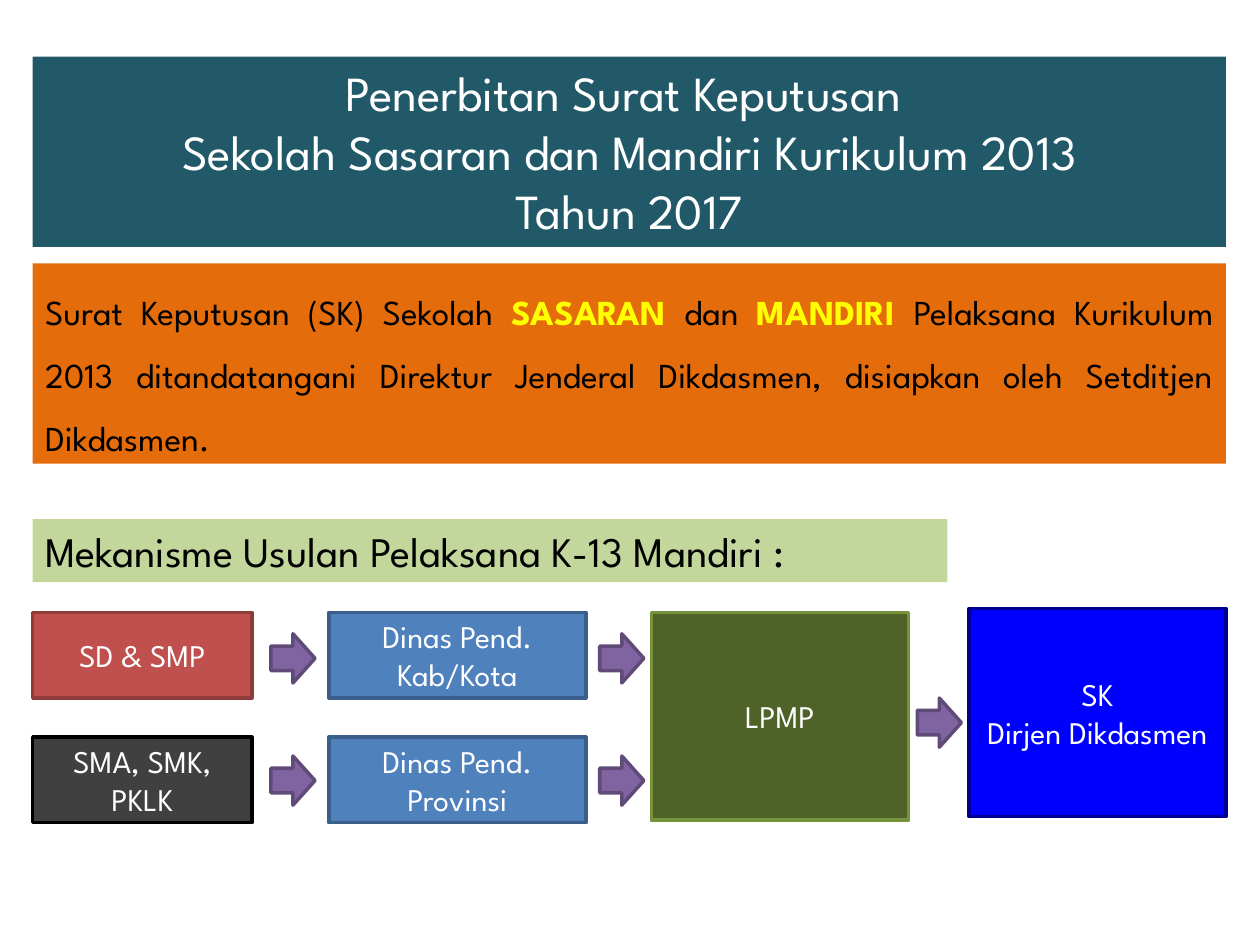
from pptx import Presentation
from pptx.dml.color import RGBColor
from pptx.enum.shapes import MSO_SHAPE
from pptx.enum.text import MSO_ANCHOR, MSO_AUTO_SIZE, PP_ALIGN
from pptx.util import Pt

THEME = {
    "font": "League Spartan",
    "title_size": 28, "heading_size": 24, "body_size": 20, "box_size": 18,
    "line_width": 2,
    "white": "FFFFFF", "black": "000000", "highlight": "FFFF00",
    "title": "215968", "decree": "E46C0A", "heading": "C3D69B",
    "primary": ("C0504D", "8E3B39"),
    "secondary": ("404040", "000000"),
    "office": ("4F81BD", "3A5F8C"),
    "agency": ("4F6228", "77933C"),
    "approval": ("0000FF", "000090"),
    "arrow": ("8064A2", "5F4A78"),
}

LEFT, FULL_WIDTH, HEADING_WIDTH = 18.72, 681.84, 522.72
COLUMNS = [(LEFT, 125.28), (187.92, 146.88), (372.24, 146.88), (553.68, 146.88)]
ROWS = [349.92, 421.2]
ROW_HEIGHT, TALL_HEIGHT, APPROVAL_TOP = 48.96, 118.8, 347.76
ARROW_WIDTH, ARROW_HEIGHT = 25.2, 28.08
ARROW_LEFTS = [154.8, 342.72, 524.16]
ARROW_ROWS = [362.16, 432]
FINAL_ARROW_TOP = 398.88

BANNERS = [
    ("title", 32.4, FULL_WIDTH, 108.72, "title_size", PP_ALIGN.CENTER, 1, True, "white",
     [["Penerbitan Surat Keputusan "],
      ["Sekolah Sasaran dan Mandiri Kurikulum 2013"],
      ["Tahun 2017"]]),
    ("decree", 150.48, FULL_WIDTH, 114.48, "body_size", PP_ALIGN.JUSTIFY, 1.5, True, "black",
     [["Surat Keputusan (SK) Sekolah ", "SASARAN ", "dan ", "MANDIRI ",
       "Pelaksana Kurikulum 2013 ditandatangani Direktur Jenderal Dikdasmen, "
       "disiapkan oleh Setditjen Dikdasmen."]]),
    ("heading", 296.64, HEADING_WIDTH, 36, "heading_size", PP_ALIGN.LEFT, 1, False, "black",
     [["Mekanisme Usulan Pelaksana K-13 Mandiri :"]]),
]
HIGHLIGHTED = {"SASARAN ", "MANDIRI "}

BOXES = [
    ("primary", 0, ROWS[0], ROW_HEIGHT, ["SD & SMP"]),
    ("secondary", 0, ROWS[1], ROW_HEIGHT, ["SMA, SMK, PKLK"]),
    ("office", 1, ROWS[0], ROW_HEIGHT, ["Dinas Pend. Kab/Kota"]),
    ("office", 1, ROWS[1], ROW_HEIGHT, ["Dinas Pend. Provinsi"]),
    ("agency", 2, ROWS[0], TALL_HEIGHT, ["LPMP"]),
    ("approval", 3, APPROVAL_TOP, TALL_HEIGHT, ["SK", "Dirjen Dikdasmen"]),
]


def color(value):
    return RGBColor.from_string(value)


def add_block(slide, preset, left, top, width, height, fill, line=None):
    shape = slide.shapes.add_shape(preset, Pt(left), Pt(top), Pt(width), Pt(height))
    shape.shadow.inherit = False
    shape.fill.solid()
    shape.fill.fore_color.rgb = color(fill)
    if line:
        shape.line.color.rgb = color(line)
        shape.line.width = Pt(THEME["line_width"])
    else:
        shape.line.fill.background()
    return shape


def write_text(shape, paragraphs, size, text_color, alignment, spacing=1):
    text_frame = shape.text_frame
    for index, parts in enumerate(paragraphs):
        paragraph = text_frame.add_paragraph() if index else text_frame.paragraphs[0]
        paragraph.alignment = alignment
        paragraph.line_spacing = spacing
        for part in parts:
            run = paragraph.add_run()
            run.text = part
            run.font.name = THEME["font"]
            run.font.size = Pt(THEME[size])
            run.font.bold = part in HIGHLIGHTED
            run.font.color.rgb = color(THEME["highlight" if part in HIGHLIGHTED else text_color])


def add_banners(slide):
    for fill, top, width, height, size, alignment, spacing, wrap, text_color, paragraphs in BANNERS:
        shape = add_block(slide, MSO_SHAPE.RECTANGLE, LEFT, top, width, height, THEME[fill])
        shape.text_frame.word_wrap = wrap
        shape.text_frame.auto_size = MSO_AUTO_SIZE.SHAPE_TO_FIT_TEXT
        shape.text_frame.vertical_anchor = MSO_ANCHOR.TOP
        write_text(shape, paragraphs, size, text_color, alignment, spacing)


def add_boxes(slide):
    for style, column, top, height, lines in BOXES:
        left, width = COLUMNS[column]
        shape = add_block(slide, MSO_SHAPE.RECTANGLE, left, top, width, height, *THEME[style])
        shape.text_frame.word_wrap = True
        shape.text_frame.vertical_anchor = MSO_ANCHOR.MIDDLE
        write_text(shape, [[line] for line in lines], "box_size", "white", PP_ALIGN.CENTER)


def add_arrows(slide):
    positions = [(left, top) for left in ARROW_LEFTS[:2] for top in ARROW_ROWS]
    positions.append((ARROW_LEFTS[2], FINAL_ARROW_TOP))
    for left, top in positions:
        add_block(slide, MSO_SHAPE.RIGHT_ARROW, left, top, ARROW_WIDTH, ARROW_HEIGHT,
                  *THEME["arrow"])


def main():
    presentation = Presentation()
    presentation.slide_width, presentation.slide_height = Pt(720), Pt(540)
    slide = presentation.slides.add_slide(presentation.slide_layouts[6])
    add_banners(slide)
    add_boxes(slide)
    add_arrows(slide)
    presentation.save("out.pptx")


if __name__ == "__main__":
    main()
